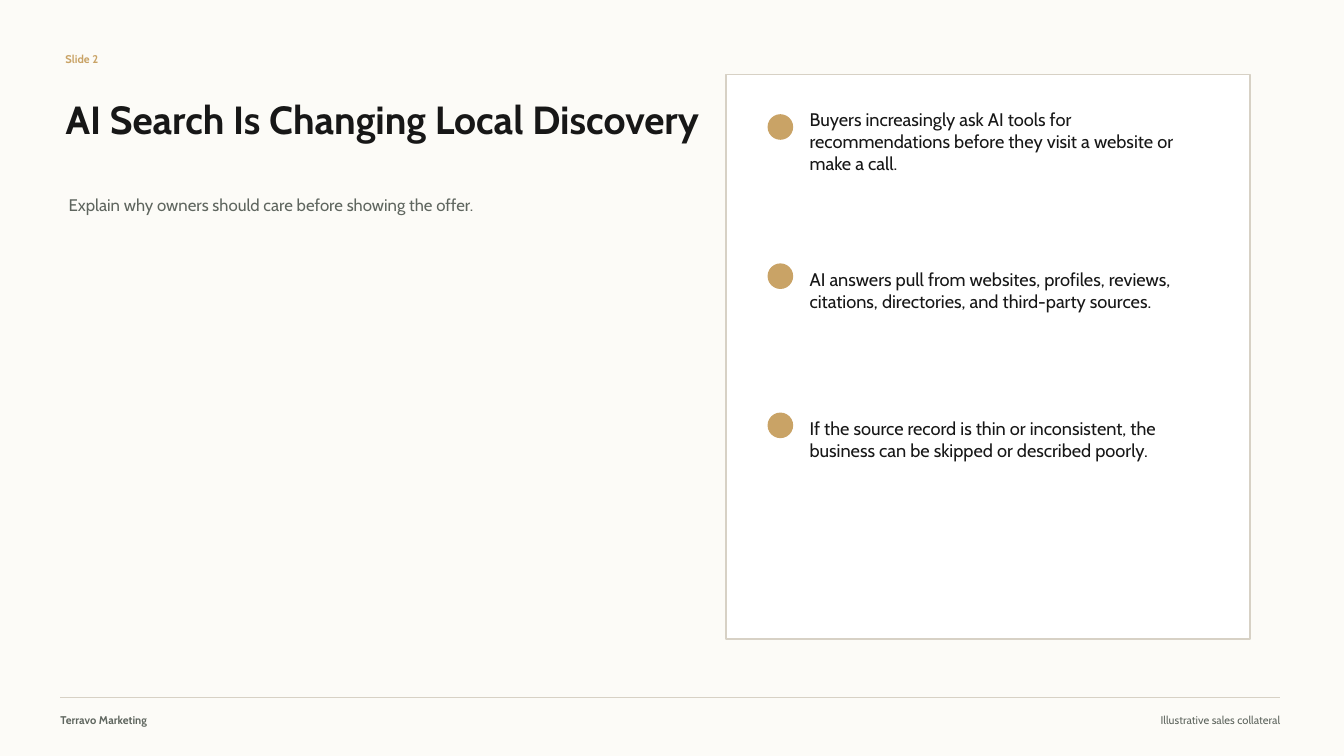
from typing import NamedTuple

from lxml.etree import SubElement
from pptx import Presentation
from pptx.dml.color import RGBColor
from pptx.enum.shapes import MSO_CONNECTOR as Connector, MSO_SHAPE as Preset
from pptx.enum.text import MSO_ANCHOR as Anchor, MSO_AUTO_SIZE as AutoSize, PP_ALIGN as Align
from pptx.oxml.ns import qn
from pptx.util import Emu, Pt

EMU_PER_PX = 9144
FONT = "Cabin"
PAPER, WHITE, INK, MUTED, GOLD, RULE = "FCFBF7", "FFFFFF", "171717", "5F665F", "C9A366", "D7D1C5"
POINT_TOP, POINT_STEP = 109, 148
POINTS = (
    "Buyers increasingly ask AI tools for recommendations before they visit a website or make a call.",
    "AI answers pull from websites, profiles, reviews, citations, directories, and third-party sources.",
    "If the source record is thin or inconsistent, the business can be skipped or described poorly.",
)


class Box(NamedTuple):
    """A rectangle in px, at 100 px to the inch."""
    left: int
    top: int
    width: int
    height: int

    def emu(self):
        """Return the four lengths in EMU."""
        return tuple(px(length) for length in self)


def px(length: int) -> Emu:
    """Turn px into EMU."""
    return Emu(length * EMU_PER_PX)


def color(value: str) -> RGBColor:
    """Turn a hex string into a colour."""
    return RGBColor.from_string(value)


def write(holder, box: Box, text: str, *, size: int, ink: str = MUTED,
          bold: bool = False, align: Align = Align.LEFT) -> None:
    """Place a text holder and fill it with one plain paragraph."""
    holder.left, holder.top, holder.width, holder.height = box.emu()
    frame = holder.text_frame
    frame.auto_size = AutoSize.NONE
    frame.word_wrap = True
    frame.vertical_anchor = Anchor.MIDDLE
    frame.margin_left = frame.margin_top = frame.margin_right = frame.margin_bottom = 0
    frame.text = text
    paragraph = frame.paragraphs[0]
    properties = paragraph._p.get_or_add_pPr()
    properties.set("marL", "0")
    properties.set("indent", "0")
    SubElement(properties, qn("a:buNone"))
    paragraph.alignment = align
    paragraph.space_before = Pt(0)
    font = paragraph.runs[0].font
    font.name, font.size, font.bold = FONT, Pt(size), bold
    font.color.rgb = color(ink)


def draw(slide, preset: Preset, box: Box, fill: str, line: str):
    """Draw a filled, outlined shape without a shadow."""
    shape = slide.shapes.add_shape(preset, *box.emu())
    shape.shadow.inherit = False
    shape.fill.solid()
    shape.fill.fore_color.rgb = color(fill)
    shape.line.color.rgb = color(line)
    shape.line.width = Pt(1)
    return shape


def add_label(slide, box: Box, text: str, **style) -> None:
    """Add a small free-standing label."""
    write(slide.shapes.add_textbox(*box.emu()), box, text, size=8, **style)


def add_card(slide, holders) -> None:
    """Draw the card behind its three points and their markers."""
    card = draw(slide, Preset.RECTANGLE, Box(720, 74, 520, 560), WHITE, RULE)
    card.element.getparent().insert(2, card.element)
    for row, (holder, point) in enumerate(zip(holders, POINTS)):
        top = POINT_TOP + row * POINT_STEP
        draw(slide, Preset.OVAL, Box(762, top + 5, 24, 24), GOLD, GOLD)
        write(holder, Box(803, top, 385, 62), point, size=13, ink=INK)


def add_footer(slide) -> None:
    """Draw the footer rule and its two labels."""
    rule = slide.shapes.add_connector(Connector.STRAIGHT, px(60), px(692), px(1270), px(692))
    rule.line.color.rgb = color(RULE)
    rule.line.width = Pt(1)
    SubElement(rule.element.spPr, qn("a:effectLst"))
    add_label(slide, Box(60, 703, 340, 22), "Terravo Marketing", bold=True)
    add_label(slide, Box(960, 703, 310, 22), "Illustrative sales collateral", align=Align.RIGHT)


def main() -> None:
    """Build and save the slide."""
    deck = Presentation()
    deck.slide_width, deck.slide_height = px(1333), px(750)
    slide = deck.slides.add_slide(deck.slide_layouts.get_by_name("Comparison"))
    slide.background.fill.solid()
    slide.background.fill.fore_color.rgb = color(PAPER)
    title, subtitle, *points = slide.placeholders
    write(title, Box(65, 82, 640, 72), "AI Search Is Changing Local Discovery",
          size=28, ink=INK, bold=True)
    write(subtitle, Box(68, 172, 590, 62),
          "Explain why owners should care before showing the offer.", size=12)
    add_label(slide, Box(65, 48, 120, 22), "Slide 2", ink=GOLD, bold=True)
    add_card(slide, points)
    add_footer(slide)
    deck.save("out.pptx")


if __name__ == "__main__":
    main()
